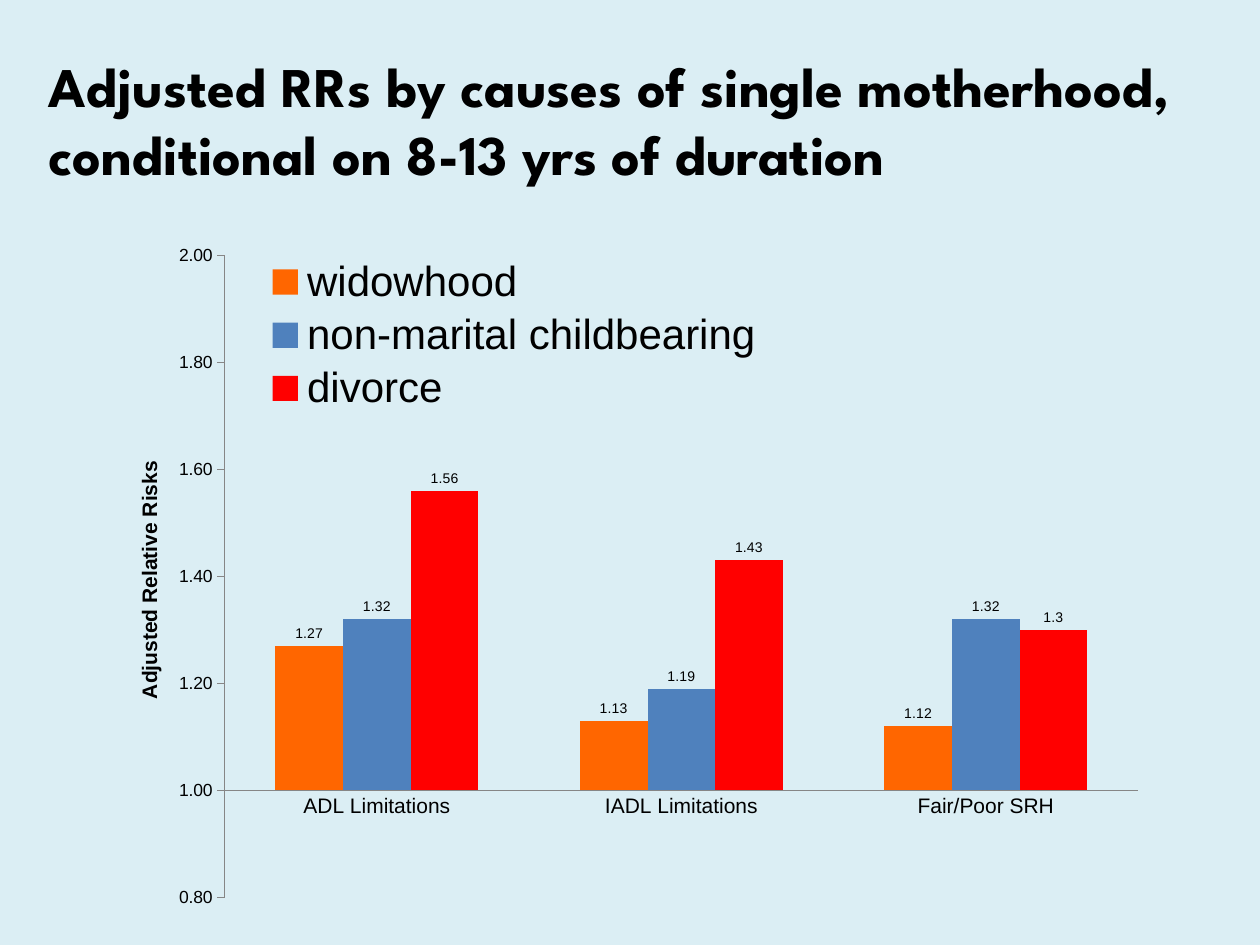
from lxml import etree
from pptx import Presentation
from pptx.chart.data import CategoryChartData
from pptx.dml.color import RGBColor
from pptx.enum import chart as ch, text
from pptx.oxml.ns import qn
from pptx.util import Pt

COLORS = {"background": "DBEEF4", "text": "000000", "axis": "868686"}
FONTS = {"title": "League Spartan", "chart": "Arial"}
TITLE = "Adjusted RRs by causes of single motherhood, conditional on 8-13 yrs of duration"
VALUE_TITLE = "Adjusted Relative Risks"
OUTCOMES = ["ADL Limitations", "IADL Limitations", "Fair/Poor SRH"]
CAUSES = [
    ("widowhood", (1.27, 1.13, 1.12), "FF6600"),
    ("non-marital childbearing", (1.32, 1.19, 1.32), "4F81BD"),
    ("divorce", (1.56, 1.43, 1.3), "FF0000"),
]
TITLE_BOX = (20.9, 23, 699.1, 90)
CHART_BOX = (57.6, 132.5, 605.5, 393.8)


def rgb(name):
    return RGBColor.from_string(COLORS.get(name, name))


def style(font, size, face="chart", bold=False):
    font.name, font.size, font.bold = FONTS[face], Pt(size), bold
    font.color.rgb = rgb("text")


def place(parent, index, target=None, **fractions):
    for old in parent.findall(qn("c:layout")):
        parent.remove(old)
    layout = etree.Element(qn("c:layout"))
    manual = etree.SubElement(layout, qn("c:manualLayout"))
    if target:
        etree.SubElement(manual, qn("c:layoutTarget")).set("val", target)
    for key in "xy":
        etree.SubElement(manual, qn(f"c:{key}Mode")).set("val", "edge")
    for key, value in fractions.items():
        etree.SubElement(manual, qn(f"c:{key}")).set("val", str(value))
    parent.insert(index, layout)


def add_title(s):
    tf = s.shapes.add_textbox(*map(Pt, TITLE_BOX)).text_frame
    tf.word_wrap = True
    tf.vertical_anchor = text.MSO_ANCHOR.MIDDLE
    tf.text = TITLE
    style(tf.paragraphs[0].runs[0].font, 32, "title", True)


def add_risk_chart(s):
    data = CategoryChartData()
    data.categories = OUTCOMES
    for name, values, _ in CAUSES:
        data.add_series(name, values)
    chart = s.shapes.add_chart(
        ch.XL_CHART_TYPE.COLUMN_CLUSTERED, *map(Pt, CHART_BOX), data
    ).chart
    chart.has_title = False
    style(chart.font, 10)
    plot = chart.plots[0]
    plot.gap_width, plot.overlap, plot.vary_by_categories = 150, 0, False
    for series, (_, _, color) in zip(plot.series, CAUSES):
        series.format.fill.solid()
        series.format.fill.fore_color.rgb = rgb(color)
        labels = series.data_labels
        labels.show_value = True
        labels.position = ch.XL_LABEL_POSITION.OUTSIDE_END
        style(labels.font, 8)

    cat, val = chart.category_axis, chart.value_axis
    for axis, size, tick in (
        (cat, 12, ch.XL_TICK_MARK.NONE),
        (val, 10, ch.XL_TICK_MARK.OUTSIDE),
    ):
        axis.has_major_gridlines = False
        axis.major_tick_mark, axis.minor_tick_mark = tick, ch.XL_TICK_MARK.NONE
        axis.format.line.color.rgb = rgb("axis")
        axis.format.line.width = Pt(0.75)
        style(axis.tick_labels.font, size)
    val.minimum_scale, val.maximum_scale, val.major_unit = 0.8, 2, 0.2
    val.crosses_at = 1
    val.tick_labels.number_format = "#,##0.00"
    val.tick_labels.number_format_is_linked = False
    tf = val.axis_title.text_frame
    tf.text = VALUE_TITLE
    style(tf.paragraphs[0].runs[0].font, 12, bold=True)

    chart.has_legend = True
    legend = chart.legend
    legend.position = ch.XL_LEGEND_POSITION.TOP
    legend.include_in_layout = False
    style(legend.font, 24)

    plot_area = chart._chartSpace.find(".//" + qn("c:plotArea"))
    place(plot_area, 0, "inner", x=0.117, y=0.034, w=0.862, h=0.932)
    place(legend._element, 1, x=0.15, y=0.03, w=0.48, h=0.24)
    place(val.axis_title._element, 1, x=0.03, y=0.327)


def main():
    prs = Presentation()
    prs.slide_width, prs.slide_height = Pt(720), Pt(540)
    s = prs.slides.add_slide(prs.slide_layouts[6])
    s.background.fill.solid()
    s.background.fill.fore_color.rgb = rgb("background")
    add_title(s)
    add_risk_chart(s)
    prs.save("out.pptx")


if __name__ == "__main__":
    main()
